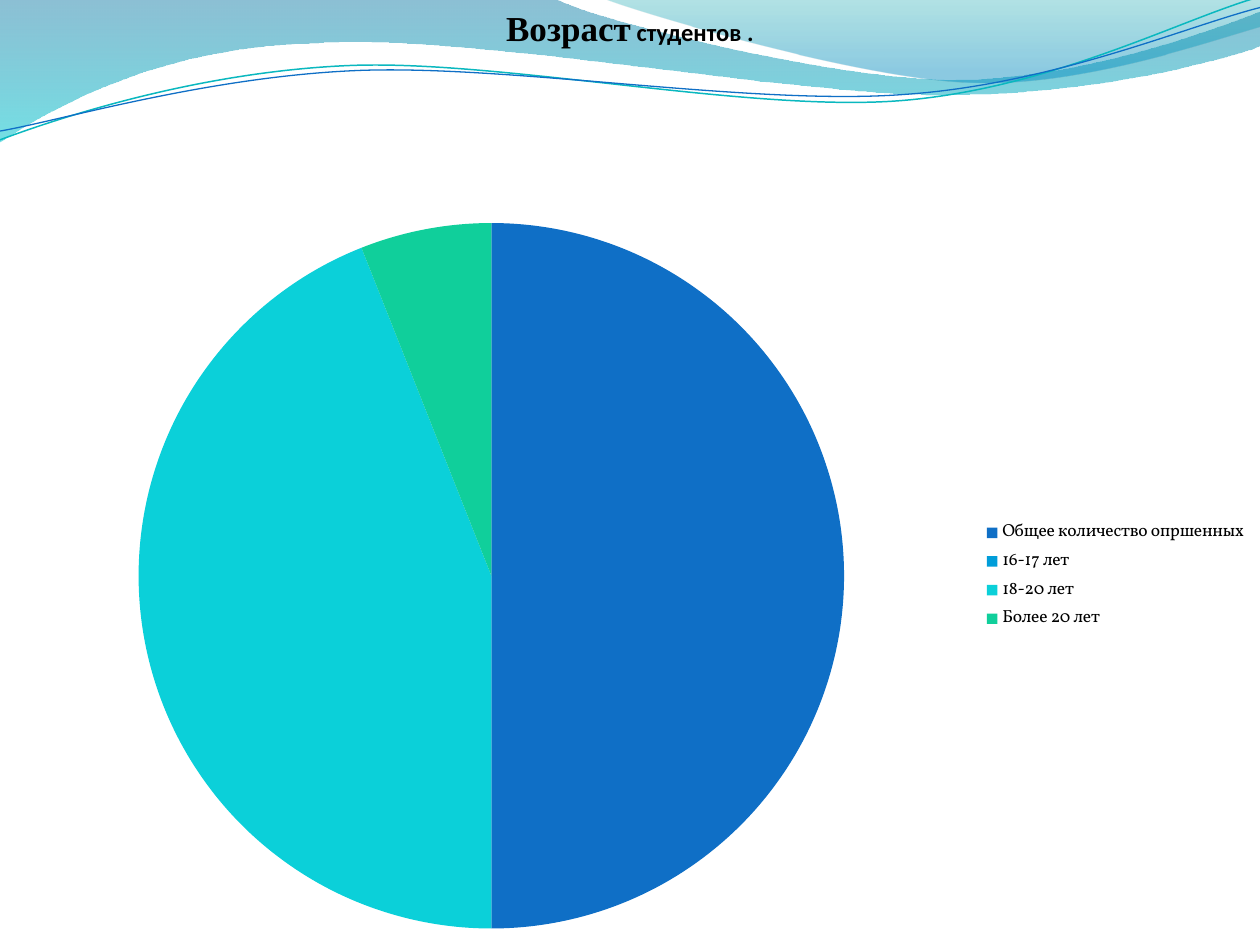
from math import cos, radians, sin
from lxml.etree import SubElement
from pptx import Presentation
from pptx.chart.data import CategoryChartData
from pptx.dml.color import RGBColor
from pptx.enum.chart import XL_CHART_TYPE, XL_LEGEND_POSITION
from pptx.enum.text import MSO_ANCHOR, PP_ALIGN
from pptx.oxml import parse_xml
from pptx.oxml.ns import nsdecls, qn
from pptx.util import Inches, Pt

BLACK = RGBColor(0x00, 0x00, 0x00)
NAVY = RGBColor(0x00, 0x74, 0xA1)
AQUA = RGBColor(0x00, 0xC6, 0xCF)
TEAL = RGBColor(0x00, 0xA1, 0xA9)
SEA = RGBColor(0x00, 0x8B, 0xBF)
CYAN = RGBColor(0x0A, 0xB8, 0xBF)
BLUE = RGBColor(0x0F, 0x6F, 0xC6)
SKY = RGBColor(0x00, 0x9D, 0xD9)
TURQUOISE = RGBColor(0x0B, 0xD0, 0xD9)
GREEN = RGBColor(0x10, 0xCF, 0x9B)
TILT = 2.7

deck = Presentation()
deck.slide_width, deck.slide_height = Inches(10), Inches(7.5)
slide = deck.slides.add_slide(deck.slide_layouts[6])
shapes = slide.shapes


def turn(x, y, tilt):
    mid, angle = (4.99, 0.58), radians(tilt)
    x, y = x - mid[0], y - mid[1]
    return (Inches(mid[0] + x * cos(angle) - y * sin(angle)),
            Inches(mid[1] + x * sin(angle) + y * cos(angle)))


def draw(start, parts, close, tilt=0):
    dots = [turn(*part[i:i + 2], tilt) for part in parts for i in range(0, len(part), 2)]
    pen = shapes.build_freeform(*turn(*start, tilt), scale=1.0)
    pen.add_line_segments(dots, close=close)
    shape = pen.convert_to_shape()
    shape.shadow.inherit = False
    shape.rotation = -tilt
    lines = iter(list(shape._element.iter(qn("a:lnTo"))))
    for part in parts:
        first = next(lines)
        if len(part) == 6:
            first.tag = qn("a:cubicBezTo")
            for _ in range(2):
                line = next(lines)
                first.append(line[0])
                line.getparent().remove(line)
    return shape


waves = [
    ((0, 0), [(4.4, -0.01), (4.76, 0.17, 6.64, 0.63, 7.58, 0.63),
              (8.53, 0.63, 9.58, 0.26, 10, 0.09), (10.01, 0.36),
              (9.83, 0.44, 8.7, 0.76, 7.46, 0.75), (6.22, 0.75, 3.82, 0.28, 2.57, 0.34),
              (1.29, 0.36, 0.46, 0.83, -0.01, 1.13), (0, 0)],
     [(0, NAVY, 45), (1, AQUA, 55)]),
    ((4.79, -0.01), [(5.09, 0.11, 6.82, 0.62, 7.69, 0.65),
                     (8.56, 0.69, 9.61, 0.32, 10, 0.21), (10, 0), (4.79, -0.01)],
     [(0, TEAL, 30), (0.8, SEA, 45)]),
]
for start, parts, stops in waves:
    wave = draw(start, parts, True)
    wave.line.fill.background()
    wave.fill.gradient()
    wave.fill.gradient_angle = 270
    for stop, (place, color, _) in zip(wave.fill.gradient_stops, stops):
        stop.position = place
        stop.color.rgb = color
    tints = wave._element.spPr.findall(".//" + qn("a:srgbClr"))
    for tint, (_, _, alpha) in zip(tints, stops):
        SubElement(tint, qn("a:alpha")).set("val", str(alpha * 1000))

curves = [
    ((0, 1.11), [(0.48, 0.93, 1.58, 0.57, 2.77, 0.52), (3.95, 0.47, 5.93, 0.89, 7.13, 0.8),
                 (8.33, 0.71, 9.38, 0.15, 9.98, -0.02)], CYAN, 0.85),
    ((0, 1.04), [(0.47, 0.96, 1.64, 0.61, 2.83, 0.56), (4.03, 0.51, 5.97, 0.84, 7.17, 0.75),
                 (8.36, 0.67, 9.41, 0.21, 10, 0.06)], BLUE, 0.75),
]
for start, parts, color, width in curves:
    curve = draw(start, parts, False, TILT)
    curve.fill.background()
    curve.line.color.rgb = color
    curve.line.width = Pt(width)

data = CategoryChartData()
data.categories = ["Общее количество опршенных", "16-17 лет", "18-20 лет", "Более 20 лет"]
data.add_series("Series 1", (50, 0, 44, 6))
chart = shapes.add_chart(XL_CHART_TYPE.PIE, Inches(0), Inches(1.64),
                         Inches(10), Inches(5.86), data).chart
chart.has_title = False
chart.font.name = "Vollkorn"
chart.font.size = Pt(10)
chart.font.color.rgb = BLACK
chart.has_legend = True
chart.legend.position = XL_LEGEND_POSITION.RIGHT
chart.legend.include_in_layout = True
plot = chart.plots[0]
plot.vary_by_categories = True
for index, color in enumerate((BLUE, SKY, TURQUOISE, GREEN)):
    fill = plot.series[0].points[index].format.fill
    fill.solid()
    fill.fore_color.rgb = color

area = chart._chartSpace.chart.plotArea
for old in area.findall(qn("c:layout")):
    area.remove(old)
area.insert(0, parse_xml(
    f'<c:layout {nsdecls("c")}><c:manualLayout><c:layoutTarget val="inner"/>'
    '<c:xMode val="edge"/><c:yMode val="edge"/><c:x val="0.11"/><c:y val="0.02"/>'
    '<c:w val="0.56"/><c:h val="0.96"/></c:manualLayout></c:layout>'))

title = shapes.add_textbox(Inches(0), Inches(0), Inches(10), Inches(0.44))
frame = title.text_frame
frame.word_wrap = True
frame.vertical_anchor = MSO_ANCHOR.MIDDLE
para = frame.paragraphs[0]
para.alignment = PP_ALIGN.CENTER
para.font.bold = True
para.font.color.rgb = BLACK
for text, size, face in (("Возраст", 20, "Times New Roman"), (" студентов .", 14, "Calibri")):
    run = para.add_run()
    run.text = text
    run.font.size = Pt(size)
    run.font.name = face

deck.save("out.pptx")
